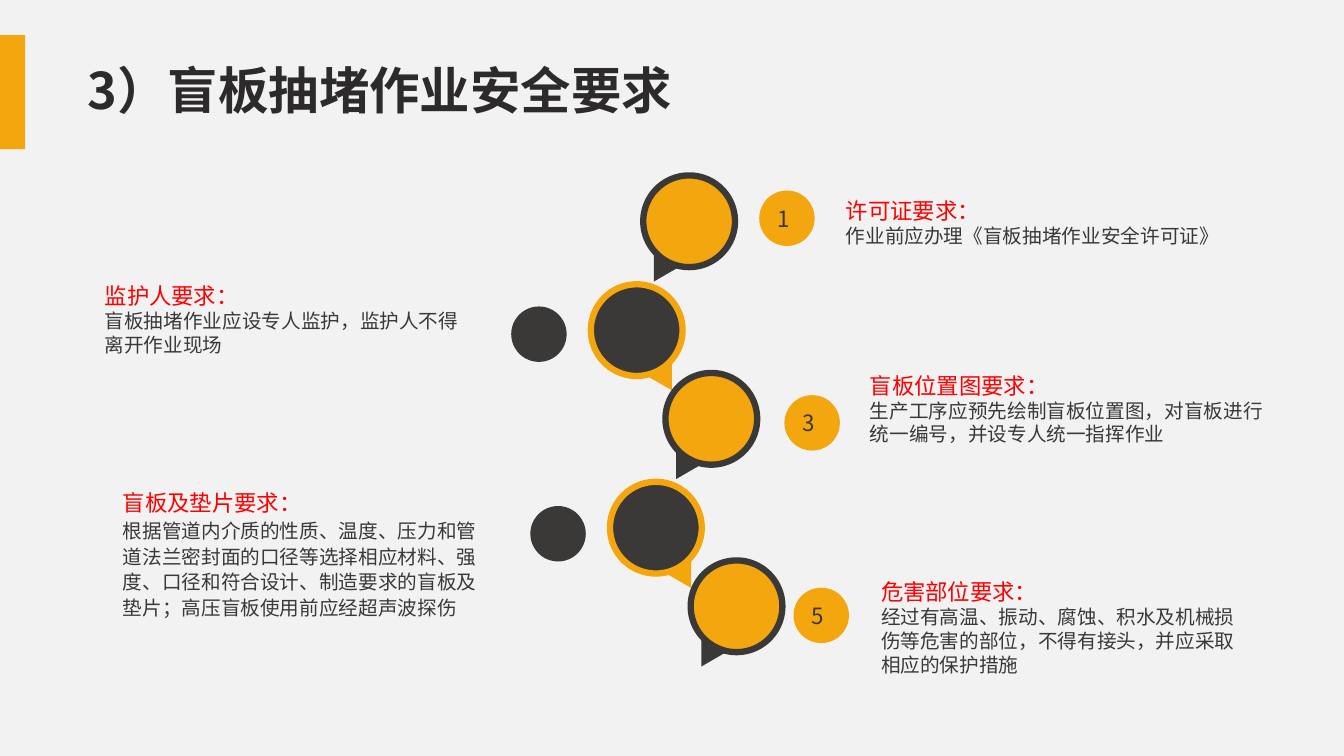
import pptx
import pptx.util
import pptx.dml.color
import pptx.enum.shapes
import pptx.enum.text
import lxml.etree

PX = 9144
FONT = "Noto Sans CJK SC"
COLOURS = {"paper": "F2F2F2", "orange": "F3A60D", "dark": "3B3838",
           "red": "FF0000", "title": "2C2A2A"}
SHAPES = pptx.enum.shapes.MSO_SHAPE
ANCHOR = pptx.enum.text.MSO_ANCHOR
LEFT = pptx.enum.text.PP_ALIGN.LEFT
DRAWING = "{http://schemas.openxmlformats.org/drawingml/2006/main}"

BUBBLE, DOT = 91, 55
TAIL_WIDTH, TAIL_HEIGHT, TAIL_DROP = 30, 26, 81

# name of side: fill, ring, tail offset, tail rotation
SIDES = {"right": ("orange", "dark", 2, 210),
         "left": ("dark", "orange", 59, 150)}

REQUIREMENTS = [
    {"side": "right", "bubble": (638, 174), "dot": (753, 189), "number": "1",
     "box": (829, 191, 425, 112), "spacing": 1.0, "heading": "许可证要求：",
     "detail": "作业前应办理《盲板抽堵作业安全许可证》"},
    {"side": "left", "bubble": (586, 282), "dot": (507, 304), "number": "",
     "box": (94, 275, 385, 131), "spacing": 1.0, "heading": "监护人要求：",
     "detail": "盲板抽堵作业应设专人监护，监护人不得离开作业现场"},
    {"side": "right", "bubble": (660, 370), "dot": (778, 392), "number": "3",
     "box": (853, 364, 412, 103), "spacing": 1.0, "heading": "盲板位置图要求：",
     "detail": "生产工序应预先绘制盲板位置图，对盲板进行统一编号，并设专人统一指挥作业"},
    {"side": "left", "bubble": (605, 478), "dot": (526, 502), "number": "",
     "box": (112, 478, 385, 191), "spacing": 1.1, "heading": "盲板及垫片要求：",
     "detail": "根据管道内介质的性质、温度、压力和管道法兰密封面的口径等选择相应材料、强度、"
               "口径和符合设计、制造要求的盲板及垫片；高压盲板使用前应经超声波探伤"},
    {"side": "right", "bubble": (685, 556), "dot": (787, 583), "number": "5",
     "box": (864, 569, 390, 131), "spacing": 1.0, "heading": "危害部位要求：",
     "detail": "经过有高温、振动、腐蚀、积水及机械损伤等危害的部位，不得有接头，并应采取相应的保护措施"},
]


def rgb(name):
    """Return the named colour."""
    return pptx.dml.color.RGBColor.from_string(COLOURS[name])


def emu(*lengths):
    """Turn px lengths into EMU."""
    return [length * PX for length in lengths]


def write(paragraph, text, size, colour, spacing=1.0, bold=False):
    """Fill a paragraph and format its runs."""
    paragraph.text = text
    paragraph.alignment = LEFT
    paragraph.line_spacing = spacing
    for run in paragraph.runs:
        run.font.name = FONT
        run.font.size = pptx.util.Pt(size)
        run.font.bold = bold
        run.font.color.rgb = rgb(colour)
        east_asian = lxml.etree.SubElement(run.font._element, DRAWING + "ea")
        east_asian.set("typeface", FONT)


def add_filled(slide, kind, box, fill, ring=None):
    """Add a flat preset shape, with a thick ring if one is named."""
    shape = slide.shapes.add_shape(kind, *emu(*box))
    shape.shadow.inherit = False
    shape.fill.solid()
    shape.fill.fore_color.rgb = rgb(fill)
    if ring:
        shape.line.color.rgb = rgb(ring)
        shape.line.width = pptx.util.Pt(4.5)
    else:
        shape.line.fill.background()
    return shape


def add_header(slide, left, top, width, height):
    """Place the edge bar and the title in the given band."""
    add_filled(slide, SHAPES.RECTANGLE, (left, top, 26, height), "orange")
    title = slide.shapes.title
    title.left, title.top, title.width, title.height = emu(
        left + 78, top + 6, width - 78, height - 11)
    frame = title.text_frame
    frame.word_wrap = True
    frame.auto_size = pptx.enum.text.MSO_AUTO_SIZE.NONE
    frame.vertical_anchor = ANCHOR.MIDDLE
    write(frame.paragraphs[0], "3）盲板抽堵作业安全要求", 36, "title", 0.9, True)


def add_bubble(slide, left, top, side):
    """Draw a ringed circle with its speech tail."""
    fill, ring, tail_offset, rotation = SIDES[side]
    add_filled(slide, SHAPES.OVAL, (left, top, BUBBLE, BUBBLE), fill, ring)
    tail = add_filled(slide, SHAPES.ISOSCELES_TRIANGLE,
                      (left + tail_offset, top + TAIL_DROP, TAIL_WIDTH, TAIL_HEIGHT), ring)
    tail.rotation = rotation


def add_dot(slide, left, top, side, number):
    """Draw the small circle, numbered where a number is given."""
    dot = add_filled(slide, SHAPES.OVAL, (left, top, DOT, DOT), SIDES[side][0])
    if number:
        dot.text_frame.vertical_anchor = ANCHOR.MIDDLE
        write(dot.text_frame.paragraphs[0], number, 16, "dark")


def add_note(slide, box, heading, detail, spacing):
    """Write a red heading and its detail in the given box."""
    frame = slide.shapes.add_textbox(*emu(*box)).text_frame
    frame.word_wrap = True
    write(frame.paragraphs[0], heading, 16, "red", spacing)
    write(frame.add_paragraph(), detail, 14, "dark", spacing)


def main():
    """Build and save the slide."""
    presentation = pptx.Presentation()
    presentation.slide_width, presentation.slide_height = emu(1333, 750)
    slide = presentation.slides.add_slide(presentation.slide_layouts[5])
    slide.background.fill.solid()
    slide.background.fill.fore_color.rgb = rgb("paper")
    add_header(slide, -1, 35, 953, 113)
    for item in REQUIREMENTS:
        add_bubble(slide, *item["bubble"], item["side"])
        add_dot(slide, *item["dot"], item["side"], item["number"])
        add_note(slide, item["box"], item["heading"], item["detail"], item["spacing"])
    presentation.save("out.pptx")


if __name__ == "__main__":
    main()
